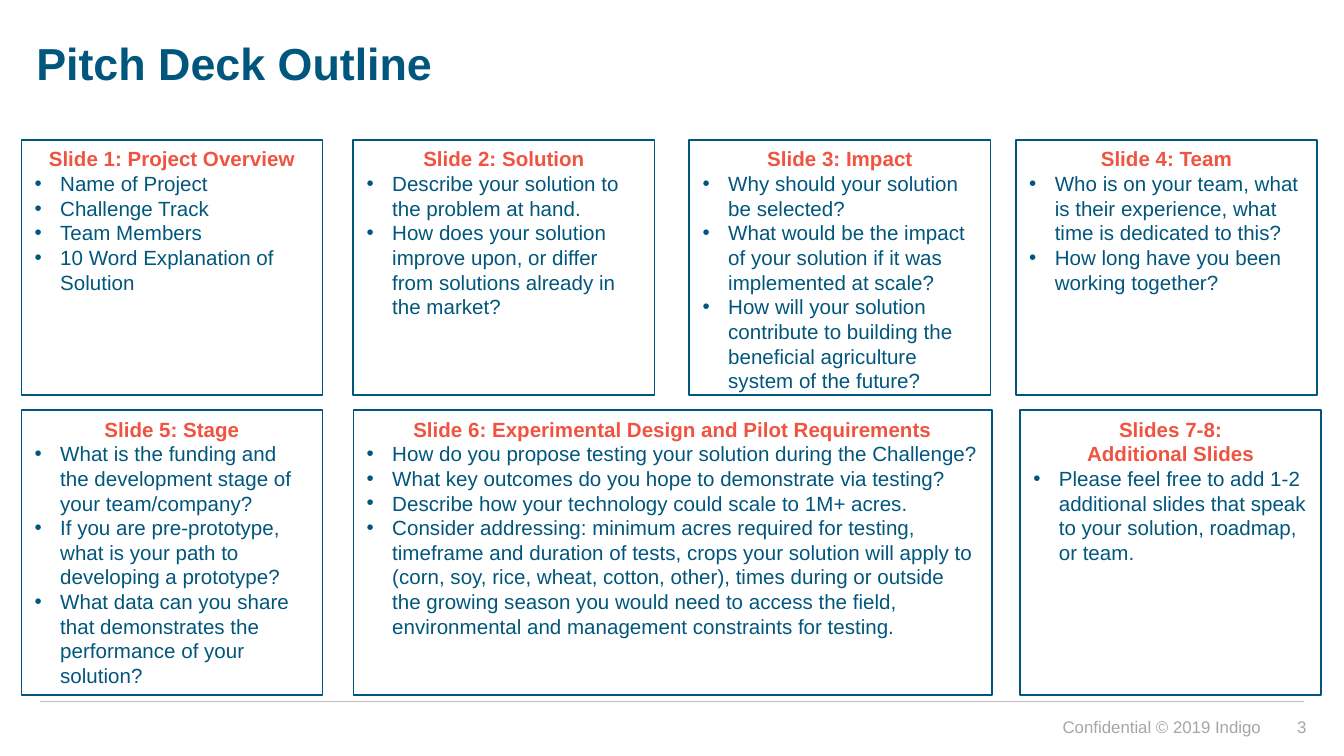
"""Build the pitch deck outline slide with its seven outlined cards."""
from dataclasses import dataclass
from lxml.etree import SubElement
from pptx import Presentation
from pptx.dml.color import RGBColor
from pptx.enum.shapes import MSO_CONNECTOR, MSO_SHAPE
from pptx.enum.text import MSO_ANCHOR, MSO_AUTO_SIZE, PP_ALIGN
from pptx.oxml.ns import qn
from pptx.util import Inches, Pt


@dataclass(frozen=True)
class Theme:
    face: str = "Arial"
    blue: RGBColor = RGBColor(0x00, 0x56, 0x7C)
    coral: RGBColor = RGBColor(0xF0, 0x54, 0x41)
    gray: RGBColor = RGBColor(0xA6, 0xA6, 0xA6)
    rule: RGBColor = RGBColor(0xBF, 0xBF, 0xBF)
    head: Pt = Pt(24)
    body: Pt = Pt(11)
    foot: Pt = Pt(9)


theme = Theme()


def style(para, size, color, bold=False):
    font = para.font
    font.name, font.size, font.bold = theme.face, size, bold
    font.color.rgb = color


def bullet(para):
    props = para._p.get_or_add_pPr()
    props.set("marL", str(Inches(0.19)))
    props.set("indent", str(-Inches(0.19)))
    SubElement(props, qn("a:buFont"), typeface=theme.face)
    SubElement(props, qn("a:buChar"), char="•")


deck = Presentation()
deck.slide_width = Inches(10)
deck.slide_height = deck.slide_width * 9 // 16
slide = deck.slides.add_slide(deck.slide_layouts[5])
shapes = slide.shapes

title = shapes.title
title.left, title.top = Inches(0.2), Inches(0.27)
title.width, title.height = Inches(9.6), Inches(0.44)
frame = title.text_frame
frame.text = "Pitch Deck Outline"
frame.auto_size = MSO_AUTO_SIZE.NONE
frame.vertical_anchor = MSO_ANCHOR.TOP
frame.margin_left = frame.margin_right = Inches(0.07)
frame.margin_top = frame.margin_bottom = Inches(0.04)
para = frame.paragraphs[0]
para.alignment = PP_ALIGN.LEFT
para.line_spacing = 0.9
style(para, theme.head, theme.blue, True)

rule = shapes.add_connector(
    MSO_CONNECTOR.STRAIGHT, Inches(0.3), Inches(5.22), Inches(9.7), Inches(5.22))
rule.line.color.rgb = theme.rule
rule.line.width = Pt(0.5)
SubElement(rule._element.spPr, qn("a:effectLst"))

notes = [
    ("Confidential © 2019 Indigo", 2.28, 5.28, 7.2, 0.25, 0.1),
    ("3", 9.48, 5.29, 0.31, 0.23, 0.07),
]
for text, left, top, width, height, inset in notes:
    box = shapes.add_textbox(Inches(left), Inches(top), Inches(width), Inches(height))
    frame = box.text_frame
    frame.word_wrap = True
    frame.vertical_anchor = MSO_ANCHOR.MIDDLE
    frame.margin_left = frame.margin_right = Inches(inset)
    frame.margin_top = frame.margin_bottom = Inches(0.04)
    frame.text = text
    para = frame.paragraphs[0]
    para.alignment = PP_ALIGN.RIGHT
    style(para, theme.foot, theme.gray)

narrow, wide = 2.24, 4.75
rows = [
    (1.04, 1.9, [
        (0.16, narrow, "Slide 1: Project Overview", [
            "Name of Project",
            "Challenge Track",
            "Team Members",
            "10 Word Explanation of Solution",
        ]),
        (2.63, narrow, "Slide 2: Solution", [
            "Describe your solution to the problem at hand.",
            "How does your solution improve upon, or differ from solutions "
            "already in the market?",
        ]),
        (5.13, narrow, "Slide 3: Impact", [
            "Why should your solution be selected?",
            "What would be the impact of your solution if it was implemented "
            "at scale?",
            "How will your solution contribute to building the beneficial "
            "agriculture system of the future?",
        ]),
        (7.56, narrow, "Slide 4: Team", [
            "Who is on your team, what is their experience, what time is "
            "dedicated to this?",
            "How long have you been working together?",
        ]),
    ]),
    (3.05, 2.12, [
        (0.16, narrow, "Slide 5: Stage", [
            "What is the funding and the development stage of your team/company?",
            "If you are pre-prototype, what is your path to developing a prototype?",
            "What data can you share that demonstrates the performance of your "
            "solution?",
        ]),
        (2.63, wide, "Slide 6: Experimental Design and Pilot Requirements", [
            "How do you propose testing your solution during the Challenge?",
            "What key outcomes do you hope to demonstrate via testing?",
            "Describe how your technology could scale to 1M+ acres.",
            "Consider addressing: minimum acres required for testing, timeframe "
            "and duration of tests, crops your solution will apply to (corn, soy, "
            "rice, wheat, cotton, other), times during or outside the growing "
            "season you would need to access the field, environmental and "
            "management constraints for testing.",
        ]),
        (7.59, narrow, "Slides 7-8:\vAdditional Slides", [
            "Please feel free to add 1-2 additional slides that speak to your "
            "solution, roadmap, or team.",
        ]),
    ]),
]
for top, height, cards in rows:
    for left, width, head, points in cards:
        card = shapes.add_shape(
            MSO_SHAPE.RECTANGLE, Inches(left), Inches(top), Inches(width), Inches(height))
        card.shadow.inherit = False
        card.fill.background()
        card.line.color.rgb = theme.blue
        card.line.width = Pt(1)
        frame = card.text_frame
        frame.word_wrap = True
        frame.vertical_anchor = MSO_ANCHOR.TOP
        frame.text = head
        para = frame.paragraphs[0]
        para.alignment = PP_ALIGN.CENTER
        style(para, theme.body, theme.coral, True)
        for point in points:
            para = frame.add_paragraph()
            para.text = point
            para.alignment = PP_ALIGN.LEFT
            bullet(para)
            style(para, theme.body, theme.blue)

deck.save("out.pptx")
